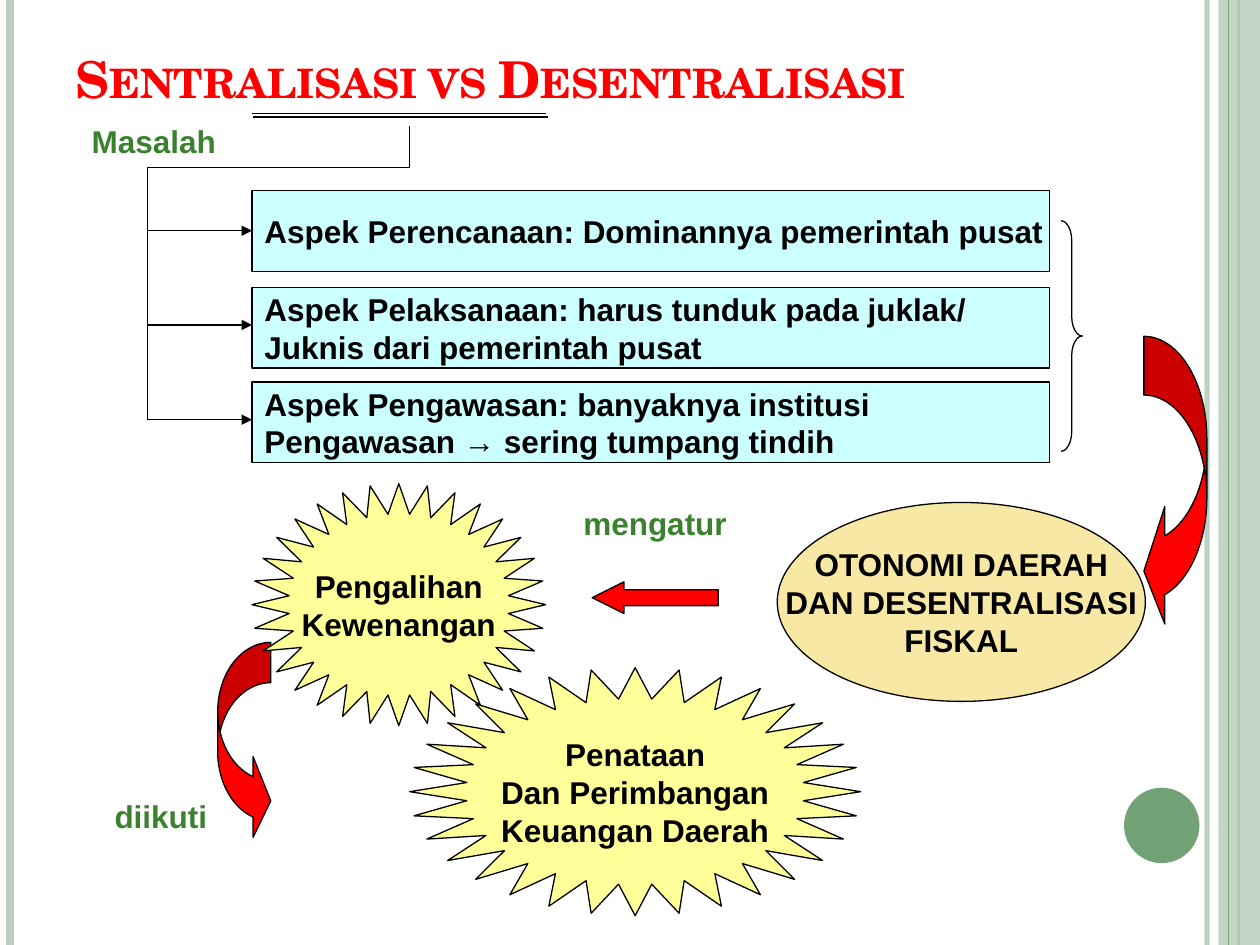
from lxml.etree import SubElement
from pptx import Presentation
from pptx.dml.color import RGBColor
from pptx.enum.shapes import MSO_CONNECTOR, MSO_SHAPE as Geo
from pptx.enum.text import MSO_ANCHOR as Anchor, MSO_AUTO_SIZE as Fit, PP_ALIGN as Align
from pptx.oxml.ns import qn
from pptx.util import Cm, Pt

HEX = {
    "black": "000000", "red": "FF0000", "label": "3B812F", "aqua": "CCFFFF",
    "yellow": "FFFF99", "sand": "F8E8A6", "pale": "BCCEBD", "green": "72A376",
}
WIDE, HIGH = 25.4, 19.05


def rgb(name):
    return RGBColor.from_string(HEX[name])


def fade(fmt_xml, pct):
    """Set the opacity of the first solid colour inside an element."""
    color = next(fmt_xml.iter(qn("a:srgbClr")))
    SubElement(color, qn("a:alpha")).set("val", str(pct * 1000))


def write(frame, text, size=18, font="Arial", color="black", align=Align.LEFT,
          anchor=Anchor.TOP, wrap=True, caps=False):
    frame.word_wrap = wrap
    frame.vertical_anchor = anchor
    frame.auto_size = Fit.NONE
    for i, line in enumerate(text.split("\n")):
        para = frame.add_paragraph() if i else frame.paragraphs[0]
        para.alignment = align
        run = para.add_run()
        run.text = line
        run.font.size, run.font.name, run.font.bold = Pt(size), font, True
        run.font.color.rgb = rgb(color)
        if caps:
            run.font._element.set("cap", "small")


def line(slide, x1, y1, x2, y2, color="black", width=0.75, arrow=False, alpha=None):
    link = slide.shapes.add_connector(
        MSO_CONNECTOR.STRAIGHT, Cm(x1), Cm(y1), Cm(x2), Cm(y2))
    link.line.width = Pt(width)
    link.line.color.rgb = rgb(color)
    props = link._element.spPr
    if alpha:
        fade(props, alpha)
    if arrow:
        SubElement(link.line._get_or_add_ln(), qn("a:tailEnd")).set("type", "triangle")
    SubElement(props, qn("a:effectLst"))


def shape(slide, kind, box, fill=None, edge="black", adj=(), text="", align=Align.CENTER):
    item = slide.shapes.add_shape(kind, *map(Cm, box))
    item.shadow.inherit = False
    for i, value in enumerate(adj):
        item.adjustments[i] = value
    if fill:
        item.fill.solid()
        item.fill.fore_color.rgb = rgb(fill)
    else:
        item.fill.background()
    if edge:
        item.line.color.rgb = rgb(edge)
        item.line.width = Pt(0.75)
    else:
        item.line.fill.background()
    if text:
        write(item.text_frame, text, align=align, anchor=Anchor.MIDDLE, wrap=False)
    return item


def label(slide, text, box):
    write(slide.shapes.add_textbox(*map(Cm, box)).text_frame, text, color="label")


def frame_art(slide):
    """Draw the side stripes and the corner disc."""
    line(slide, 24.33, 0, 24.33, HIGH, "pale", 3, alpha=93)
    line(slide, 0.2, 0, 0.2, HIGH, "pale", 4.5)
    line(slide, 24.97, 0, 24.97, HIGH, "green", 1.5)
    band = shape(slide, Geo.RECTANGLE, (24.56, 0, 0.84, HIGH), "pale", None)
    fade(band._element.spPr, 87)
    line(slide, 24.77, 0, 24.77, HIGH, "green")
    shape(slide, Geo.OVAL, (22.66, 15.88, 1.52, 1.52), "green", None)


def heading(slide, text):
    title = slide.shapes.title
    title.left, title.top, title.width, title.height = map(Cm, (1.27, 0.76, 22.86, 1.55))
    write(title.text_frame, text, size=29, font="TeX Gyre Schola", color="red",
          anchor=Anchor.BOTTOM, caps=True)
    line(slide, 5.08, 2.29, 11, 2.29)
    line(slide, 5.11, 2.36, 11.05, 2.36)


def aspects(slide):
    """Draw the problem tree: a trunk with one arrow and box per aspect."""
    trunk, stem, edge, bend = 2.97, 8.26, 5.08, 3.38
    rows = [
        (4.65, 3.84, "Aspek Perencanaan: Dominannya pemerintah pusat"),
        (6.55, 5.79, "Aspek Pelaksanaan: harus tunduk pada juklak/\n"
                     "Juknis dari pemerintah pusat"),
        (8.46, 7.7, "Aspek Pengawasan: banyaknya institusi\n"
                    "Pengawasan → sering tumpang tindih"),
    ]
    line(slide, stem, 2.54, stem, bend)
    line(slide, trunk, bend, stem, bend)
    line(slide, trunk, bend, trunk, rows[-1][0])
    for mid, top, text in rows:
        line(slide, trunk, mid, edge, mid, arrow=True)
        shape(slide, Geo.RECTANGLE, (edge, top, 16.08, 1.63), "aqua",
              text=text, align=Align.LEFT)
    label(slide, "Masalah", (1.6, 2.34, 4.01, 1.02))
    shape(slide, Geo.RIGHT_BRACE, (21.39, 4.45, 0.43, 4.65), adj=(0.917, 0.5))


def reform(slide):
    """Draw the flow from regional autonomy to its two results."""
    shape(slide, Geo.CURVED_LEFT_ARROW, (23.06, 6.78, 1.27, 5.92), "red",
          adj=(0.933, 1.867, 0.333))
    shape(slide, Geo.LEFT_ARROW, (11.94, 11.73, 2.54, 0.64), "red", adj=(0.5, 1))
    shape(slide, Geo.OVAL, (15.67, 10.13, 7.42, 4.01), "sand",
          text="OTONOMI DAERAH\nDAN DESENTRALISASI\nFISKAL")
    shape(slide, Geo.CURVED_RIGHT_ARROW, (4.39, 12.95, 1.07, 4.01), "red",
          adj=(0.76, 1.52, 0.333))
    for box, text in [
        ((5.08, 9.75, 5.92, 4.88), "Pengalihan\nKewenangan"),
        ((8.26, 13.46, 9.09, 5), "Penataan\nDan Perimbangan\nKeuangan Daerah"),
    ]:
        shape(slide, Geo.STAR_32_POINT, box, "yellow", adj=(0.375,), text=text)
    label(slide, "mengatur", (11.51, 10.03, 3.81, 1.02))
    label(slide, "diikuti", (2.06, 15.95, 2.74, 1.02))


def main():
    deck = Presentation()
    deck.slide_width, deck.slide_height = Cm(WIDE), Cm(HIGH)
    slide = deck.slides.add_slide(deck.slide_layouts[5])
    frame_art(slide)
    heading(slide, "Sentralisasi vs Desentralisasi")
    aspects(slide)
    reform(slide)
    deck.save("out.pptx")


if __name__ == "__main__":
    main()
